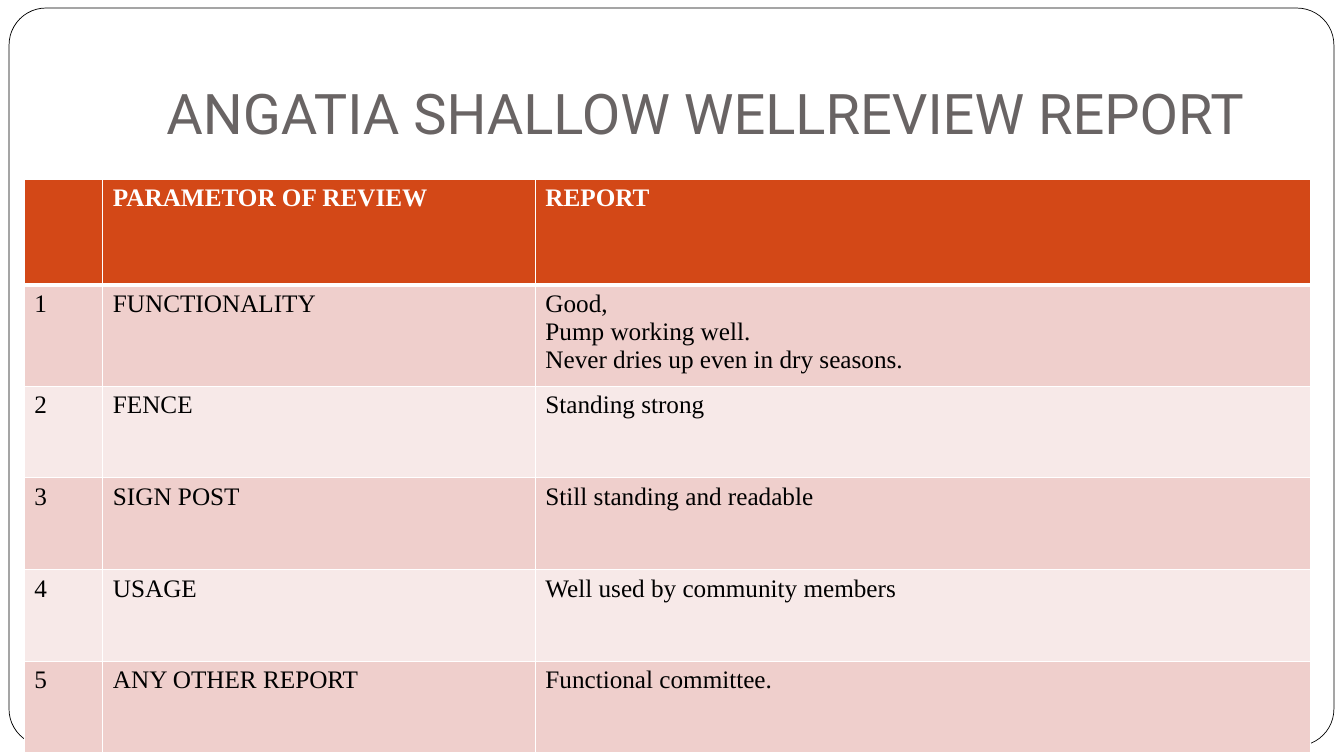
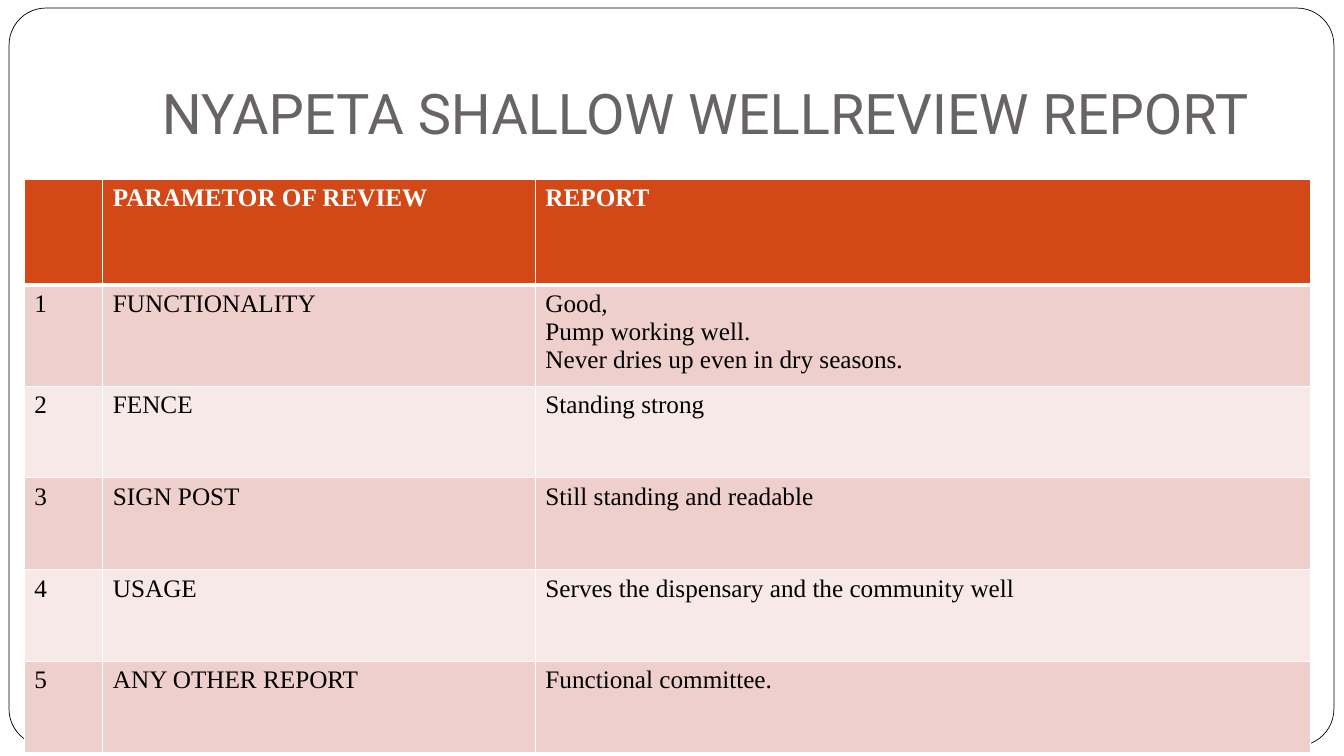
from lxml.etree import SubElement
from pptx import Presentation
from pptx.dml.color import RGBColor
from pptx.enum.shapes import MSO_SHAPE
from pptx.enum.text import MSO_ANCHOR, PP_ALIGN
from pptx.oxml.ns import qn
from pptx.util import Inches, Pt

WHITE, BLACK, TITLE_GREY = "FFFFFF", "000000", "696464"
HEADER_ORANGE, BANDS = "D34817", ("EFCFCC", "F7E9E8")
TITLE_FONT, TABLE_FONT = "Roboto", "Times New Roman"

FRAME_BOX = (0.09, 0.08, 13.14, 7.32)
TITLE_BOX = (1.33, 0.3, 11.33, 1.25)
TABLE_BOX = (0.24, 1.78, 12.76, 5.6)
COLUMN_WIDTHS = (0.78, 4.29, 7.69)
HEADER_HEIGHT = 1.05

HEADINGS = ("", "PARAMETOR OF REVIEW", "REPORT")
PARAMETERS = ("FUNCTIONALITY", "FENCE", "SIGN POST", "USAGE", "ANY OTHER REPORT")
WELLS = (
    ("ANGATIA", "Well used by community members"),
    ("NYAPETA", "Serves the dispensary and the community well"),
)


def color(value):
    return RGBColor.from_string(value)


def style_text(text_frame, font_name, size, text_color, bold=False, align=PP_ALIGN.LEFT):
    for paragraph in text_frame.paragraphs:
        paragraph.alignment = align
        font = paragraph.font
        font.name, font.size, font.bold = font_name, Pt(size), bold
        font.color.rgb = color(text_color)


def add_frame(slide, box):
    frame = slide.shapes.add_shape(MSO_SHAPE.ROUNDED_RECTANGLE, *map(Inches, box))
    frame.adjustments[0] = 0.05
    frame.shadow.inherit = False
    frame.fill.solid()
    frame.fill.fore_color.rgb = color(WHITE)
    frame.line.color.rgb = color(BLACK)
    frame.line.width = Pt(0.5)


def add_title(slide, box, text):
    text_frame = slide.shapes.add_textbox(*map(Inches, box)).text_frame
    text_frame.word_wrap = True
    text_frame.vertical_anchor = MSO_ANCHOR.BOTTOM
    text_frame.margin_bottom = Inches(0.1)
    text_frame.text = text
    style_text(text_frame, TITLE_FONT, 40, TITLE_GREY, align=PP_ALIGN.CENTER)


def set_borders(cell, top, bottom):
    properties = cell._tc.get_or_add_tcPr()
    for side, width in (("L", 1), ("R", 1), ("T", top), ("B", bottom)):
        line = SubElement(properties, qn(f"a:ln{side}"), w=str(Pt(width)))
        fill = SubElement(line, qn("a:solidFill"))
        SubElement(fill, qn("a:srgbClr"), val=WHITE)


def fill_cell(cell, row_index, text):
    header = row_index == 0
    set_borders(cell, top=3 if row_index == 1 else 1, bottom=3 if header else 1)
    cell.fill.solid()
    cell.fill.fore_color.rgb = color(HEADER_ORANGE if header else BANDS[(row_index - 1) % 2])
    cell.text_frame.text = text
    style_text(cell.text_frame, TABLE_FONT, 18, WHITE if header else BLACK, bold=header)


def add_review_table(slide, box, findings):
    rows = [HEADINGS]
    for number, (parameter, finding) in enumerate(zip(PARAMETERS, findings), 1):
        rows.append((str(number), parameter, finding))
    table = slide.shapes.add_table(len(rows), len(HEADINGS), *map(Inches, box)).table
    for column, width in zip(table.columns, COLUMN_WIDTHS):
        column.width = Inches(width)
    body_height = (box[3] - HEADER_HEIGHT) / len(PARAMETERS)
    for row_index, texts in enumerate(rows):
        table.rows[row_index].height = Inches(body_height if row_index else HEADER_HEIGHT)
        for column_index, text in enumerate(texts):
            fill_cell(table.cell(row_index, column_index), row_index, text)


def add_review_slide(presentation, well, usage):
    slide = presentation.slides.add_slide(presentation.slide_layouts[6])
    add_frame(slide, FRAME_BOX)
    add_title(slide, TITLE_BOX, f"{well} SHALLOW WELLREVIEW REPORT")
    findings = (
        "Good,\nPump working well.\nNever dries up even in dry seasons.",
        "Standing strong",
        "Still standing and readable",
        usage,
        "Functional committee.",
    )
    add_review_table(slide, TABLE_BOX, findings)


def main():
    presentation = Presentation()
    presentation.slide_width = Inches(13.33)
    presentation.slide_height = Inches(7.5)
    for well, usage in WELLS:
        add_review_slide(presentation, well, usage)
    presentation.save("out.pptx")


if __name__ == "__main__":
    main()
